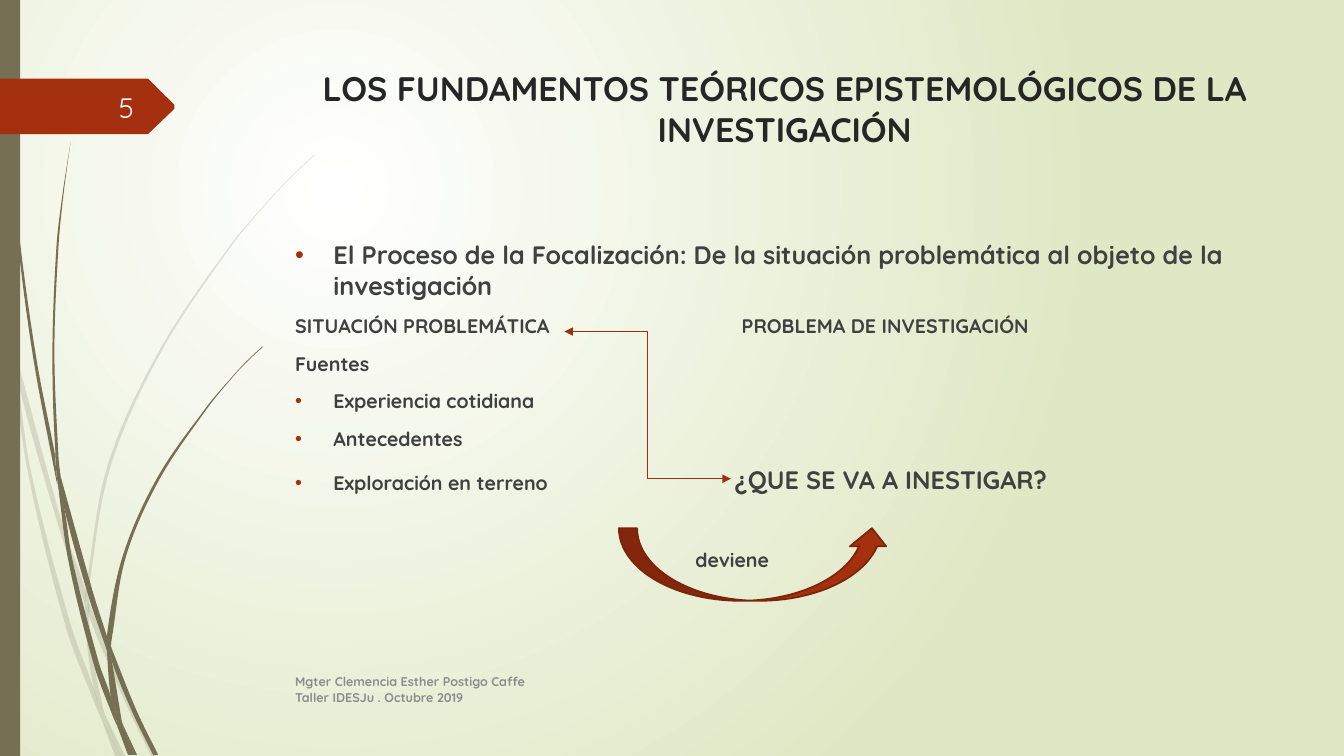
from dataclasses import dataclass
from math import dist

from lxml import etree
from pptx import Presentation
from pptx.dml.color import RGBColor
from pptx.enum.shapes import MSO_CONNECTOR, MSO_SHAPE
from pptx.enum.text import MSO_ANCHOR, PP_ALIGN
from pptx.oxml.ns import qn
from pptx.util import Pt

PX = 9144  # 100 px to the inch
FONT = "Quicksand"
OLIVE, RED, DARK_RED = "766F54", "A53010", "7A240C"
INK, GREY = "404040", "8C8C8C"
SMOOTH_COS = 0.8  # sharper turns stay corners

Point = tuple[float, float]


@dataclass
class Blade:
    points: list[Point]
    opacity: int = 100


@dataclass
class Line:
    text: str
    size: float = 14
    bullet: bool = False
    before: float = 10
    tab: int = 0


PALE_BLADES = [
    [(11, 350), (9, 322), (0, 282), (0, 299), (10, 344)],
    [(58, 522), (84, 599), (85, 586), (62, 520), (14, 345), (17, 376)],
    [(92, 607), (88, 596), (88, 610), (123, 694), (150, 750), (155, 750), (127, 692)],
    [(119, 750), (124, 750), (105, 711)],
    [(93, 683), (70, 619), (31, 469), (17, 376), (11, 350), (28, 470), (65, 621),
     (92, 693), (101, 714), (99, 707)],
    [(84, 599), (87, 646), (93, 683), (96, 692), (105, 711), (103, 706), (91, 646),
     (88, 610), (88, 608)],
    [(88, 584), (110, 462), (160, 349), (229, 245), (268, 198), (290, 175), (312, 154),
     (312, 153), (289, 175), (268, 197), (228, 244), (158, 348), (107, 461), (85, 584),
     (85, 586), (88, 596)],
    [(101, 714), (114, 750), (119, 750)],
    [(88, 608), (88, 610), (88, 596), (85, 586), (84, 599)],
    [(96, 692), (93, 683), (99, 707), (101, 714), (119, 750), (105, 711)],
]
DARK_BLADES = [
    [(7, 110), (17, 233), (33, 355), (56, 477), (57, 481), (55, 457), (55, 453),
     (36, 355), (19, 232), (8, 109), (5, 48), (4, 0), (3, 0), (4, 48)],
    [(88, 592), (106, 645), (106, 633), (106, 631), (93, 590), (60, 472), (64, 505)],
    [(113, 649), (110, 641), (111, 656), (132, 708), (152, 749), (157, 749), (136, 706)],
    [(110, 691), (98, 657), (72, 556), (64, 505), (57, 477), (68, 557), (93, 659),
     (111, 708), (117, 722), (116, 717)],
    [(60, 472), (58, 453), (54, 349), (58, 245), (63, 193), (70, 141), (62, 193),
     (56, 245), (52, 349), (55, 449)],
    [(133, 749), (136, 749), (122, 719)],
    [(57, 477), (64, 505), (60, 472), (55, 449), (55, 453)],
    [(111, 633), (125, 552), (158, 476), (205, 406), (231, 374), (245, 359), (261, 344),
     (260, 344), (245, 358), (231, 373), (204, 405), (156, 474), (122, 551), (106, 631),
     (110, 641)],
    [(117, 722), (127, 749), (131, 749)],
    [(106, 645), (110, 691), (116, 706), (122, 719), (121, 716), (111, 656), (109, 651)],
    [(106, 645), (109, 651), (111, 656), (110, 641), (106, 631), (106, 633)],
    [(116, 706), (110, 691), (116, 717), (117, 722), (130, 749), (133, 749), (122, 719)],
]
BLADES = [Blade(b, 20) for b in PALE_BLADES] + [Blade(b) for b in DARK_BLADES]
NUMBER_TAG = [(0, 78), (147, 78), (173, 104), (173, 108), (147, 133), (0, 133)]

BODY = [
    Line("El Proceso de la Focalización: De la situación problemática al objeto "
         "de la investigación", 18, True),
    Line("SITUACIÓN PROBLEMÁTICA\tPROBLEMA DE INVESTIGACIÓN", tab=443),
    Line("Fuentes"),
    Line("Experiencia cotidiana", bullet=True),
    Line("Antecedentes", bullet=True),
    Line("Exploración en terreno", bullet=True, before=14.5),
    Line("\tdeviene", before=38, tab=397),
]


def px(value: float) -> int:
    return round(value * PX)


def rgb(color: str) -> RGBColor:
    return RGBColor.from_string(color)


def paint(sp, fill: str, line: str | None = None, width: float = 1):
    sp.shadow.inherit = False
    sp.fill.solid()
    sp.fill.fore_color.rgb = rgb(fill)
    if line:
        sp.line.color.rgb = rgb(line)
        sp.line.width = Pt(width)
    else:
        sp.line.fill.background()


def add_preset(s, kind, box: tuple[int, int, int, int], fill: str, **outline):
    paint(s.shapes.add_shape(kind, *map(px, box)), fill, **outline)


def handle(prev: Point, at: Point, to: Point, after: Point) -> Point:
    """Control point next to `at` on the segment from `at` to `to`."""
    (px0, py0), (x, y), (x1, y1) = prev, at, to
    before, length, chord = dist(prev, at), dist(at, to), dist(prev, to)
    turn = ((x - px0) * (x1 - x) + (y - py0) * (y1 - y)) / (before * length)
    if turn < SMOOTH_COS:
        return x + (x1 - x) / 3, y + (y1 - y) / 3
    reach = length / chord / 3
    return x + (x1 - px0) * reach, y + (y1 - py0) * reach


def add_outline(s, points: list[Point], fill: str, opacity: int = 100):
    """Closed outline, curved through every gentle turn."""
    start, *rest = [(px(x), px(y)) for x, y in points]
    builder = s.shapes.build_freeform(*start, scale=1.0)
    builder.add_line_segments([*rest, start], close=True)
    sp = builder.convert_to_shape()
    left, top = min(x for x, _ in points), min(y for _, y in points)
    n = len(points)
    for i, segment in enumerate(list(sp._element.iter(qn("a:lnTo")))):
        prev, at, to, after = (points[(i + k) % n] for k in (-1, 0, 1, 2))
        controls = handle(prev, at, to, after), handle(after, to, at, prev)
        curve = etree.Element(qn("a:cubicBezTo"))
        for x, y in controls:
            etree.SubElement(curve, qn("a:pt"), x=str(px(x - left)), y=str(px(y - top)))
        curve.append(segment[0])
        segment.getparent().replace(segment, curve)
    paint(sp, fill)
    if opacity < 100:
        color = sp.fill._xPr.find(qn("a:solidFill"))[0]
        etree.SubElement(color, qn("a:alpha"), val=str(opacity * 1000))


def format_paragraph(p, line: Line):
    pPr = p._p.get_or_add_pPr()
    if line.bullet:
        pPr.set("marL", str(px(38)))
        pPr.set("indent", str(-px(38)))
        color = etree.SubElement(pPr, qn("a:buClr"))
        etree.SubElement(color, qn("a:srgbClr"), val=RED)
        etree.SubElement(pPr, qn("a:buFont"), typeface="Arial")
        etree.SubElement(pPr, qn("a:buChar"), char="•")
    if line.tab:
        tabs = etree.SubElement(pPr, qn("a:tabLst"))
        etree.SubElement(tabs, qn("a:tab"), pos=str(px(line.tab)), algn="l")


def add_text(s, lines: list[Line], box: tuple[int, int, int, int], *, color: str = INK,
             bold: bool = True, align=PP_ALIGN.LEFT, anchor=MSO_ANCHOR.TOP):
    tf = s.shapes.add_textbox(*map(px, box)).text_frame
    tf.word_wrap = True
    tf.vertical_anchor = anchor
    for i, line in enumerate(lines):
        p = tf.add_paragraph() if i else tf.paragraphs[0]
        p.alignment = align
        p.space_before = Pt(line.before)
        format_paragraph(p, line)
        r = p.add_run()
        r.text = line.text
        r.font.name, r.font.size, r.font.bold = FONT, Pt(line.size), bold
        r.font.color.rgb = rgb(color)


def add_double_arrow(s, start: tuple[int, int], end: tuple[int, int]):
    cn = s.shapes.add_connector(MSO_CONNECTOR.ELBOW, *map(px, start + end))
    cn.line.color.rgb = rgb("9E2E0F")
    cn.line.width = Pt(0.75)
    ln = cn.line._get_or_add_ln()
    for tag in ("a:headEnd", "a:tailEnd"):
        etree.SubElement(ln, qn(tag), type="triangle")
    etree.SubElement(cn._element.spPr, qn("a:effectLst"))


def set_background(s):
    fill = s.background.fill
    fill.gradient()
    for stop, color in zip(fill.gradient_stops, ("FFFFFF", "DFE8C4")):
        stop.color.rgb = rgb(color)
    grad = fill._xPr.find(qn("a:gradFill"))
    grad.remove(grad.find(qn("a:lin")))
    circle = etree.SubElement(grad, qn("a:path"))
    circle.set("path", "circle")
    etree.SubElement(circle, qn("a:fillToRect"), l="50000", t="50000",
                     r="100000", b="100000")


def main():
    prs = Presentation()
    prs.slide_width, prs.slide_height = Pt(960), px(750)
    s = prs.slides.add_slide(prs.slide_layouts[6])

    # Background and side decoration
    set_background(s)
    for blade in BLADES:
        add_outline(s, blade.points, OLIVE, blade.opacity)
    add_preset(s, MSO_SHAPE.RECTANGLE, (0, 0, 20, 750), OLIVE)
    add_outline(s, NUMBER_TAG, RED)

    # Title and body
    title = "LOS FUNDAMENTOS TEÓRICOS EPISTEMOLÓGICOS DE LA INVESTIGACIÓN"
    add_text(s, [Line(title, 24.3, before=0)], (291, 62, 975, 140), color="262626",
             align=PP_ALIGN.CENTER)
    add_text(s, BODY, (283, 233, 975, 413))
    add_text(s, [Line("¿QUE SE VA A INESTIGAR?", 18, before=0)], (719, 456, 360, 41))

    # Footer and slide number
    footer = ["Mgter Clemencia Esther Postigo Caffe", "Taller IDESJu . Octubre 2019"]
    add_text(s, [Line(text, 9, before=0) for text in footer], (283, 664, 833, 40),
             color=GREY, anchor=MSO_ANCHOR.MIDDLE)
    add_text(s, [Line("5", 20, before=0)], (58, 86, 85, 40), color="FEFFFF", bold=False,
             align=PP_ALIGN.RIGHT, anchor=MSO_ANCHOR.MIDDLE)

    # Arrows
    add_double_arrow(s, (560, 329), (725, 475))
    add_preset(s, MSO_SHAPE.CURVED_UP_ARROW, (614, 524, 269, 72), RED,
               line=DARK_RED, width=1.25)

    prs.save("out.pptx")


if __name__ == "__main__":
    main()
